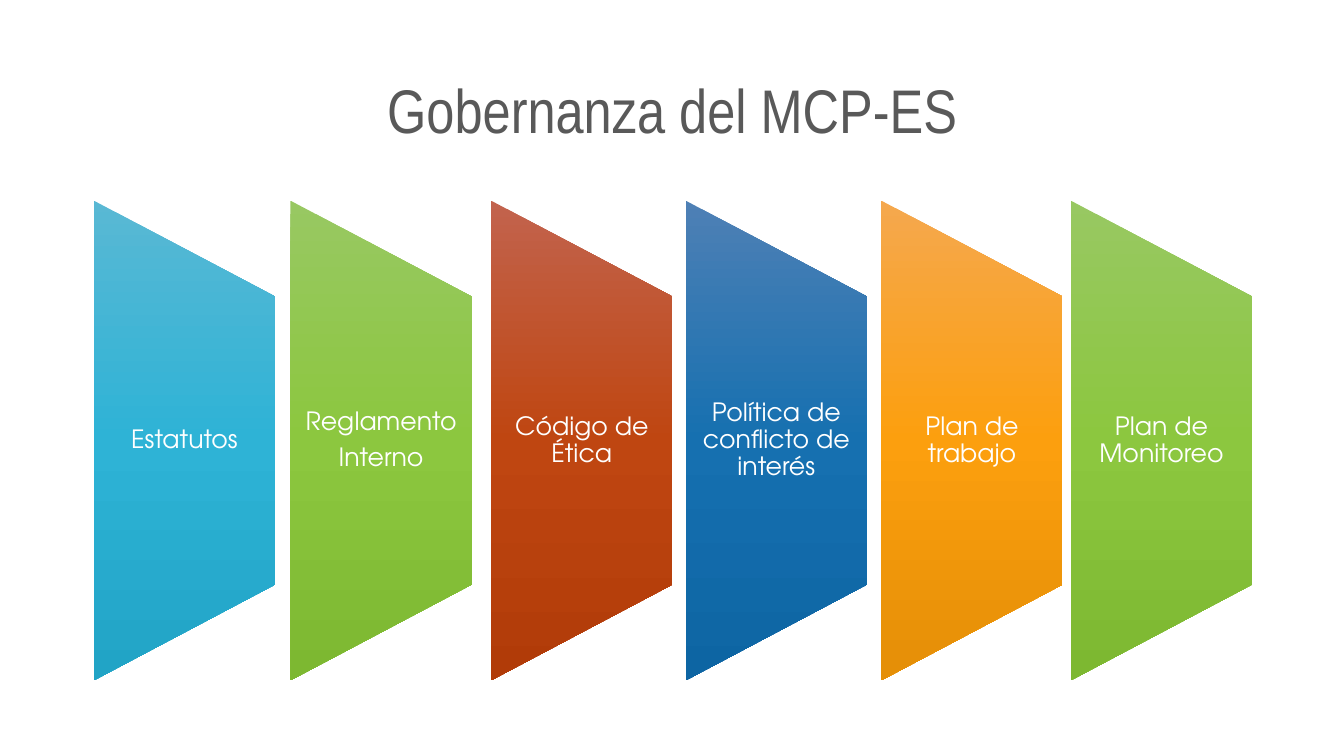
"""Build the governance slide: a title over six tapered panels."""
import dataclasses

import lxml.etree
import pptx
import pptx.dml.color
import pptx.enum.shapes
import pptx.enum.text
import pptx.oxml.ns
import pptx.util

Inches = pptx.util.Inches
Pt = pptx.util.Pt
qn = pptx.oxml.ns.qn


@dataclasses.dataclass(frozen=True)
class Theme:
    """Colours, fonts and type sizes of the slide."""
    title_font: str = "Arial Narrow"
    title_size: float = 44
    title_color: str = "595959"
    label_font: str = "TeX Gyre Adventor"
    label_size: float = 18
    label_color: str = "FFFFFF"
    cyan: tuple = ("59B8D4", "2EB3D6", "21A4C6")
    green: tuple = ("98C862", "8CC73F", "7DB831")
    red: tuple = ("C2634D", "BF4611", "B13B08")
    blue: tuple = ("4E80B5", "1670B0", "0D65A3")
    orange: tuple = ("F5A84E", "FC9F0E", "E58F07")


THEME = Theme()
PANEL_WIDTH = 1.8
PANEL_HEIGHT = 4.76
PANEL_MIDDLE = 4.37
LABEL_HEIGHT = 2.86
PANELS = [
    (0.93, THEME.cyan, ["Estatutos"]),
    (2.88, THEME.green, ["Reglamento", "Interno"]),
    (4.87, THEME.red, ["Código de Ética"]),
    (6.8, THEME.blue, ["Política de conflicto de interés"]),
    (8.74, THEME.orange, ["Plan de trabajo"]),
    (10.62, THEME.green, ["Plan de Monitoreo"]),
]


def add_text(slide, box, lines, font, size, color, inset, space_after=0):
    """Add a centred text box with one paragraph per line."""
    tf = slide.shapes.add_textbox(*map(Inches, box)).text_frame
    tf.word_wrap = True
    tf.vertical_anchor = pptx.enum.text.MSO_ANCHOR.MIDDLE
    tf.margin_left = tf.margin_right = Inches(inset)
    tf.margin_top = tf.margin_bottom = 0
    for i, line in enumerate(lines):
        p = tf.add_paragraph() if i else tf.paragraphs[0]
        p.alignment = pptx.enum.text.PP_ALIGN.CENTER
        p.line_spacing = 0.9
        p.space_after = Pt(space_after)
        r = p.add_run()
        r.text = line
        r.font.name = font
        r.font.size = Pt(size)
        r.font.color.rgb = pptx.dml.color.RGBColor.from_string(color)


def fill_gradient(sp, colors):
    """Fill a shape from top to bottom, whatever its rotation."""
    sp.fill.gradient()
    sp.fill.gradient_angle = 270
    grad = sp._element.spPr.find(qn("a:gradFill"))
    grad.set("rotWithShape", "0")
    stops = grad.find(qn("a:gsLst"))
    for stop in list(stops):
        stops.remove(stop)
    for i, color in enumerate(colors):
        stop = lxml.etree.SubElement(stops, qn("a:gs"), pos=str(i * 50000))
        lxml.etree.SubElement(stop, qn("a:srgbClr"), val=color)


def add_panel(slide, left, colors, lines):
    """Add a tapered panel, turned on its side, and its label."""
    sp = slide.shapes.add_shape(
        pptx.enum.shapes.MSO_SHAPE.FLOWCHART_MANUAL_OPERATION,
        Inches(left + (PANEL_WIDTH - PANEL_HEIGHT) / 2),
        Inches(PANEL_MIDDLE - PANEL_WIDTH / 2),
        Inches(PANEL_HEIGHT), Inches(PANEL_WIDTH))
    sp.rotation = 270
    sp.shadow.inherit = False
    sp.line.fill.background()
    fill_gradient(sp, colors)
    box = (left, PANEL_MIDDLE - LABEL_HEIGHT / 2, PANEL_WIDTH, LABEL_HEIGHT)
    add_text(slide, box, lines, THEME.label_font, THEME.label_size,
             THEME.label_color, inset=0.12, space_after=6.3)


def main():
    """Build and save the presentation."""
    prs = pptx.Presentation()
    prs.slide_width = Inches(13.33)
    prs.slide_height = Inches(7.5)
    slide = prs.slides.add_slide(prs.slide_layouts[6])
    add_text(slide, (0.92, 0.4, 11.5, 1.45), ["Gobernanza del MCP-ES"],
             THEME.title_font, THEME.title_size, THEME.title_color, inset=0.1)
    for left, colors, lines in PANELS:
        add_panel(slide, left, colors, lines)
    prs.save("out.pptx")


if __name__ == "__main__":
    main()
